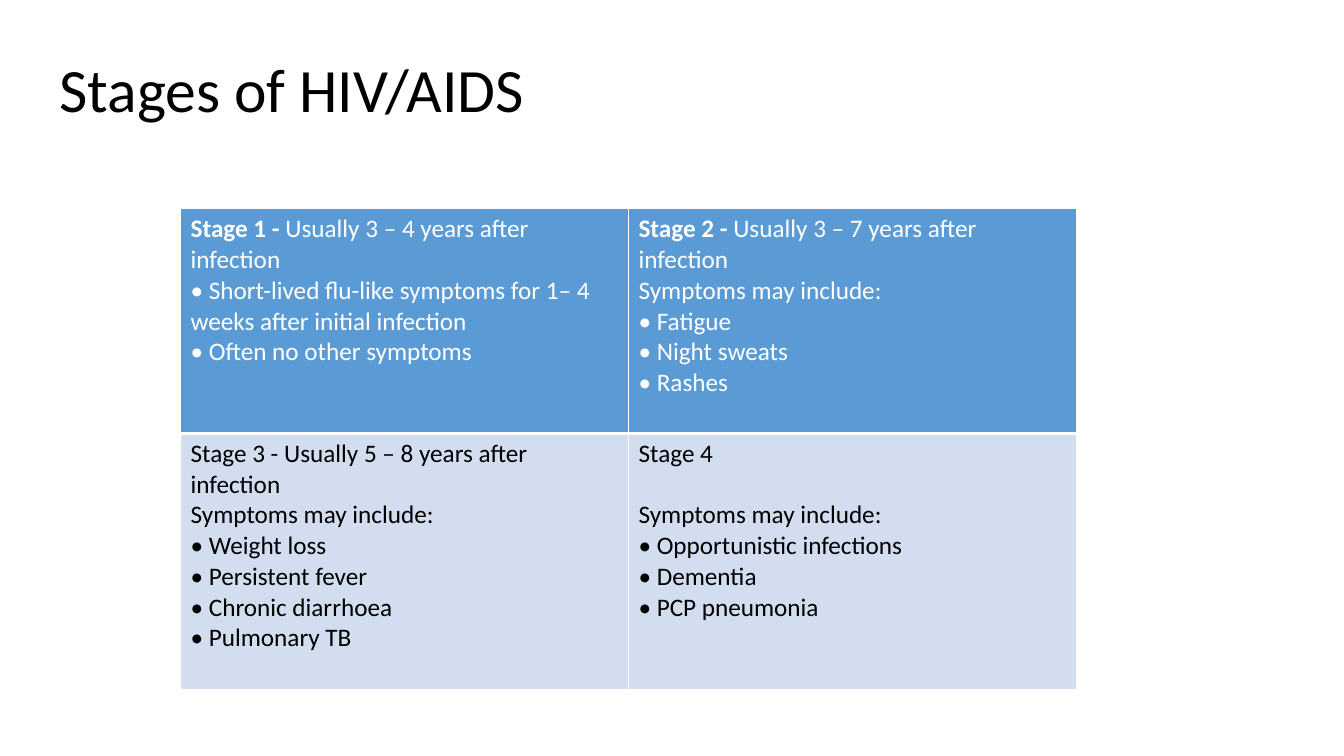
import pptx
import pptx.dml.color
import pptx.enum.text
import pptx.oxml
import pptx.oxml.ns
import pptx.util
from pptx.util import Cm

RGBColor = pptx.dml.color.RGBColor
BLACK = RGBColor(0x00, 0x00, 0x00)
WHITE = RGBColor(0xFF, 0xFF, 0xFF)
BLUE = RGBColor(0x5B, 0x9B, 0xD5)
PALE_BLUE = RGBColor(0xD2, 0xDE, 0xEF)
FONT = "Calibri"
LINE_GAP = 22  # one line of table text, in points

# Each stage: bold lead, rest of heading, points after heading, body lines
STAGES = [
    [("Stage 1 - ", "Usually 3 – 4 years after infection", 0,
      ["• Short-lived flu-like symptoms for 1– 4 weeks after initial infection",
       "• Often no other symptoms"]),
     ("Stage 2 - ", "Usually 3 – 7 years after infection", 0,
      ["Symptoms may include:", "• Fatigue", "• Night sweats", "• Rashes"])],
    [("", "Stage 3 - Usually 5 – 8 years after infection", 0,
      ["Symptoms may include:", "• Weight loss", "• Persistent fever",
       "• Chronic diarrhoea", "• Pulmonary TB"]),
     ("", "Stage 4", LINE_GAP,
      ["Symptoms may include:", "• Opportunistic infections", "• Dementia",
       "• PCP pneumonia"])],
]
ROW_HEIGHTS = [Cm(5.66), Cm(6.45)]
ROW_STYLES = [(BLUE, WHITE), (PALE_BLUE, BLACK)]


def add_run(p, text, size, color, bold=False):
    r = p.add_run()
    r.text = text
    r.font.name = FONT
    r.font.size = pptx.util.Pt(size)
    r.font.bold = bold
    r.font.color.rgb = color


def set_borders(cell, widths):
    """Draw white borders; widths maps L, R, T, B to points."""
    tc_pr = cell._tc.get_or_add_tcPr()
    for i, side in enumerate("LRTB"):
        tc_pr.insert(i, pptx.oxml.parse_xml(
            f'<a:ln{side} {pptx.oxml.ns.nsdecls("a")} w="{pptx.util.Pt(widths[side])}">'
            f'<a:solidFill><a:srgbClr val="{WHITE}"/></a:solidFill></a:ln{side}>'))


def add_title(s, left, top, width, height):
    tf = s.shapes.add_textbox(left, top, width, height).text_frame
    tf.word_wrap = True
    tf.vertical_anchor = pptx.enum.text.MSO_ANCHOR.MIDDLE
    p = tf.paragraphs[0]
    p.line_spacing = 0.9
    add_run(p, "Stages of HIV/AIDS", 44, BLACK)


def fill_stage(cell, stage, color):
    lead, heading, gap, lines = stage
    tf = cell.text_frame
    p = tf.paragraphs[0]
    p.space_after = pptx.util.Pt(gap)
    if lead:
        add_run(p, lead, 18, color, bold=True)
    add_run(p, heading, 18, color)
    for line in lines:
        add_run(tf.add_paragraph(), line, 18, color)


def add_stages_table(s, left, top, width):
    table = s.shapes.add_table(
        len(STAGES), len(STAGES[0]), left, top, width, sum(ROW_HEIGHTS)).table
    for i, stages in enumerate(STAGES):
        table.rows[i].height = ROW_HEIGHTS[i]
        fill, color = ROW_STYLES[i]
        for j, stage in enumerate(stages):
            cell = table.cell(i, j)
            cell.fill.solid()
            cell.fill.fore_color.rgb = fill
            set_borders(cell, {"L": 1, "R": 1,
                               "T": 3 if i == 1 else 1,
                               "B": 3 if i == 0 else 1})
            fill_stage(cell, stage, color)


def main():
    prs = pptx.Presentation()
    prs.slide_width, prs.slide_height = Cm(33.87), Cm(19.05)
    s = prs.slides.add_slide(prs.slide_layouts[6])
    add_title(s, Cm(1.25), Cm(0.5), Cm(29.2), Cm(3.68))
    add_stages_table(s, Cm(4.55), Cm(5.26), Cm(22.58))
    prs.save("out.pptx")


if __name__ == "__main__":
    main()
